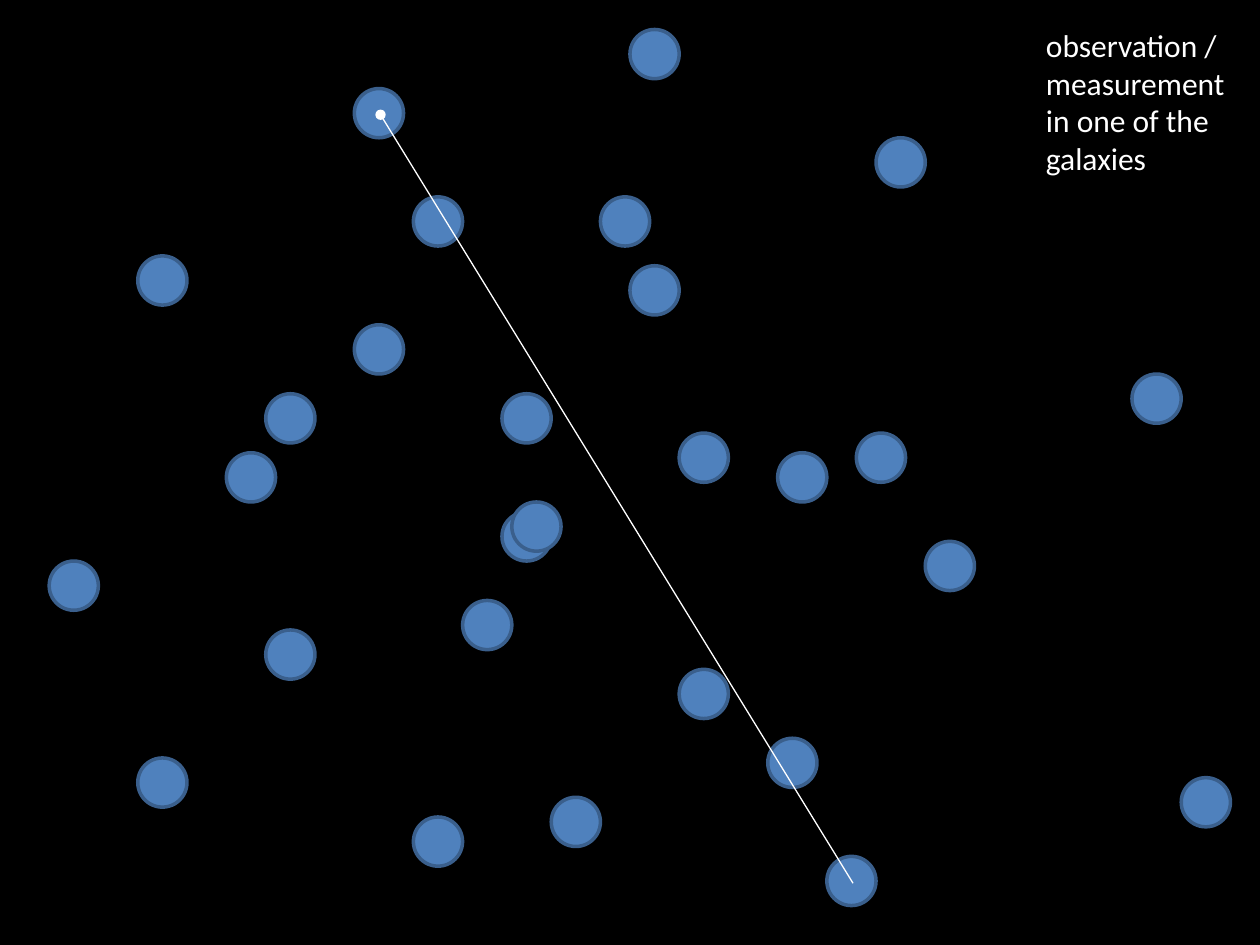
from pptx import Presentation
from pptx.dml import color
from pptx.enum import shapes, text
from pptx.oxml import parse_xml, ns
from pptx import util as u

COLS, ROWS = 128, 96
SIZE = 5  # galaxy diameter in cells

# Top-left cell of every galaxy, back to front
GALAXIES = [
    (14, 26), (36, 9), (51, 52), (61, 20), (87, 44), (23, 46), (36, 33),
    (42, 20), (64, 3), (79, 46), (89, 14), (115, 38), (51, 40), (64, 27),
    (47, 61), (69, 44), (84, 87), (94, 55), (120, 79), (56, 81), (69, 68),
    (5, 57), (27, 40), (42, 83), (52, 51), (78, 75), (14, 77), (27, 64),
]


def rgb(code):
    return color.RGBColor.from_string(code)


class Sky:
    back, blue, rim, white = "000000", "4F81BD", "3A5F8C", "FFFFFF"
    font = "Calibri"

    def __init__(self, deck):
        self.cell = deck.slide_width / COLS
        self.slide = deck.slides.add_slide(deck.slide_layouts[6])
        fill = self.slide.background.fill
        fill.solid()
        fill.fore_color.rgb = rgb(self.back)

    def grid(self, *cells):
        return [u.Emu(round(n * self.cell)) for n in cells]

    def galaxy(self, col, row):
        dot = self.slide.shapes.add_shape(
            shapes.MSO_SHAPE.OVAL, *self.grid(col, row, SIZE, SIZE))
        dot.shadow.inherit = False
        dot.fill.solid()
        dot.fill.fore_color.rgb = rgb(self.blue)
        dot.line.color.rgb = rgb(self.rim)
        dot.line.width = u.Pt(2)

    def label(self, words, *box):
        frame = self.slide.shapes.add_textbox(*self.grid(*box)).text_frame
        frame.word_wrap = True
        frame.auto_size = text.MSO_AUTO_SIZE.SHAPE_TO_FIT_TEXT
        frame.text = words
        font = frame.paragraphs[0].runs[0].font
        font.name, font.size = self.font, u.Pt(18)
        font.color.rgb = rgb(self.white)

    def sight(self, *ends):
        line = self.slide.shapes.add_connector(
            shapes.MSO_CONNECTOR.STRAIGHT, *self.grid(*ends))
        line.line.color.rgb = rgb(self.white)
        line.line.width = u.Pt(0.75)
        # Round dot at the observer's end, no shadow
        space = ns.nsdecls("a")
        line.line._get_or_add_ln().append(
            parse_xml(f'<a:headEnd {space} type="oval"/>'))
        line._element.spPr.append(parse_xml(f"<a:effectLst {space}/>"))


def main():
    deck = Presentation()
    deck.slide_width, deck.slide_height = u.Inches(10), u.Inches(7.5)
    sky = Sky(deck)

    # Galaxies
    for col, row in GALAXIES:
        sky.galaxy(col, row)

    # Caption
    sky.label("observation / measurement in one of the galaxies",
              105, 2, 22, 16.8)

    # Line of sight between two galaxies
    sky.sight(38.66, 11.66, 86.66, 89.73)

    deck.save("out.pptx")


if __name__ == "__main__":
    main()
